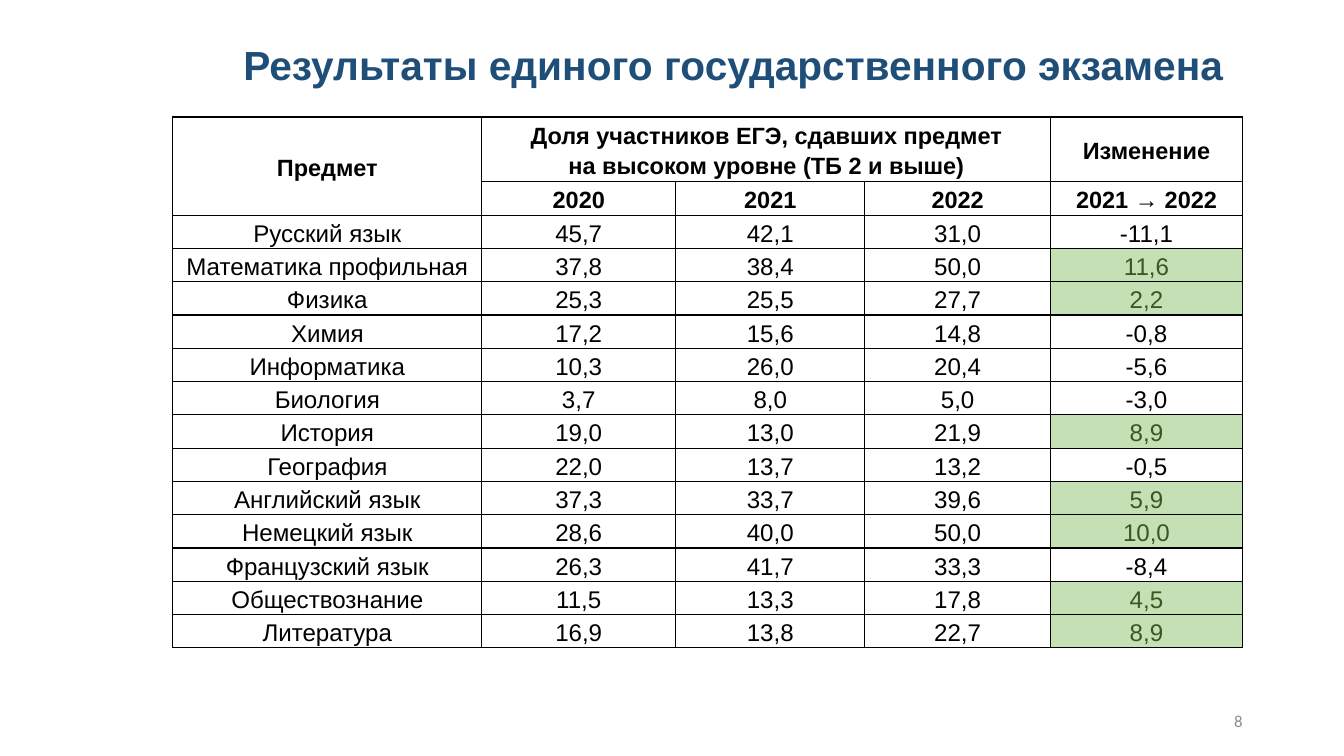
from lxml.etree import SubElement
from pptx import Presentation
from pptx.dml.color import RGBColor
from pptx.enum.text import MSO_ANCHOR, MSO_AUTO_SIZE, PP_ALIGN
from pptx.oxml.ns import qn
from pptx.util import Inches, Pt

COLORS = {"title": "1F4E79", "text": "000000", "page": "8C8C8C",
          "cell": "FFFFFF", "growth": "C5E0B4", "gain": "385723"}
HEAD = [
    ["Предмет", "Доля участников ЕГЭ, сдавших предмет\nна высоком уровне (ТБ 2 и выше)",
     "", "", "Изменение"],
    ["", "2020", "2021", "2022", "2021 → 2022"],
]
SCORES = [
    ["Русский язык", "45,7", "42,1", "31,0", "-11,1"],
    ["Математика профильная", "37,8", "38,4", "50,0", "11,6"],
    ["Физика", "25,3", "25,5", "27,7", "2,2"],
    ["Химия", "17,2", "15,6", "14,8", "-0,8"],
    ["Информатика", "10,3", "26,0", "20,4", "-5,6"],
    ["Биология", "3,7", "8,0", "5,0", "-3,0"],
    ["История", "19,0", "13,0", "21,9", "8,9"],
    ["География", "22,0", "13,7", "13,2", "-0,5"],
    ["Английский язык", "37,3", "33,7", "39,6", "5,9"],
    ["Немецкий язык", "28,6", "40,0", "50,0", "10,0"],
    ["Французский язык", "26,3", "41,7", "33,3", "-8,4"],
    ["Обществознание", "11,5", "13,3", "17,8", "4,5"],
    ["Литература", "16,9", "13,8", "22,7", "8,9"],
]
WIDTHS = [3.38, 2.12, 2.07, 2.03, 2.1]
HEIGHT, TOP_ROW = 5.8, 0.71


def style(font, size, color, bold=False, name="Arial"):
    font.name, font.size, font.bold = name, Pt(size), bold
    font.color.rgb = RGBColor.from_string(COLORS[color])


def border(cell):
    props = cell._tc.get_or_add_tcPr()
    for side in ("lnL", "lnR", "lnT", "lnB"):
        line = SubElement(props, qn(f"a:{side}"), w=str(Pt(1)))
        fill = SubElement(line, qn("a:solidFill"))
        SubElement(fill, qn("a:srgbClr"), val=COLORS["text"])


deck = Presentation()
deck.slide_width, deck.slide_height = Inches(14.7), Inches(8.27)
slide = deck.slides.add_slide(deck.slide_layouts[5])

title = slide.shapes.title
title.left, title.top = Inches(2.52), Inches(0.39)
title.width, title.height = Inches(11.01), Inches(0.64)
frame = title.text_frame
frame.text = "Результаты единого государственного экзамена"
frame.word_wrap = False
frame.auto_size = MSO_AUTO_SIZE.SHAPE_TO_FIT_TEXT
frame.vertical_anchor = MSO_ANCHOR.TOP
frame.paragraphs[0].alignment = PP_ALIGN.CENTER
style(frame.paragraphs[0].runs[0].font, 32, "title", True)

rows = HEAD + SCORES
table = slide.shapes.add_table(len(rows), len(WIDTHS), Inches(1.89), Inches(1.28),
                               Inches(sum(WIDTHS)), Inches(HEIGHT)).table
table.horz_banding = False
for column, width in zip(table.columns, WIDTHS):
    column.width = Inches(width)
for row in table.rows:
    row.height = Inches((HEIGHT - TOP_ROW) / (len(rows) - 1))
table.rows[0].height = Inches(TOP_ROW)
table.cell(0, 0).merge(table.cell(1, 0))
table.cell(0, 1).merge(table.cell(0, 3))

for r, row in enumerate(rows):
    head = r < len(HEAD)
    for c, text in enumerate(row):
        cell = table.cell(r, c)
        gain = not head and c == 4 and not text.startswith("-")
        border(cell)
        cell.fill.solid()
        cell.fill.fore_color.rgb = RGBColor.from_string(COLORS["growth" if gain else "cell"])
        cell.margin_left = cell.margin_right = Inches(0.07)
        cell.margin_top = cell.margin_bottom = 0
        cell.vertical_anchor = MSO_ANCHOR.MIDDLE
        cell.text_frame.text = text
        for para in cell.text_frame.paragraphs:
            para.alignment, para.line_spacing = PP_ALIGN.CENTER, 1.15
            # Merged cells hold no run, so the size goes on the paragraph too
            para.font.size = Pt(18.5 if head else 19)
            for run in para.runs:
                style(run.font, 18.5 if head else 19, "gain" if gain else "text", head)

page = slide.shapes.add_textbox(Inches(10.38), Inches(7.66), Inches(3.31), Inches(0.44))
page.text_frame.word_wrap = True
page.text_frame.vertical_anchor = MSO_ANCHOR.MIDDLE
para = page.text_frame.paragraphs[0]
para.text = "8"
para.alignment = PP_ALIGN.RIGHT
style(para.runs[0].font, 13.2, "page", name="Calibri")

deck.save("out.pptx")
